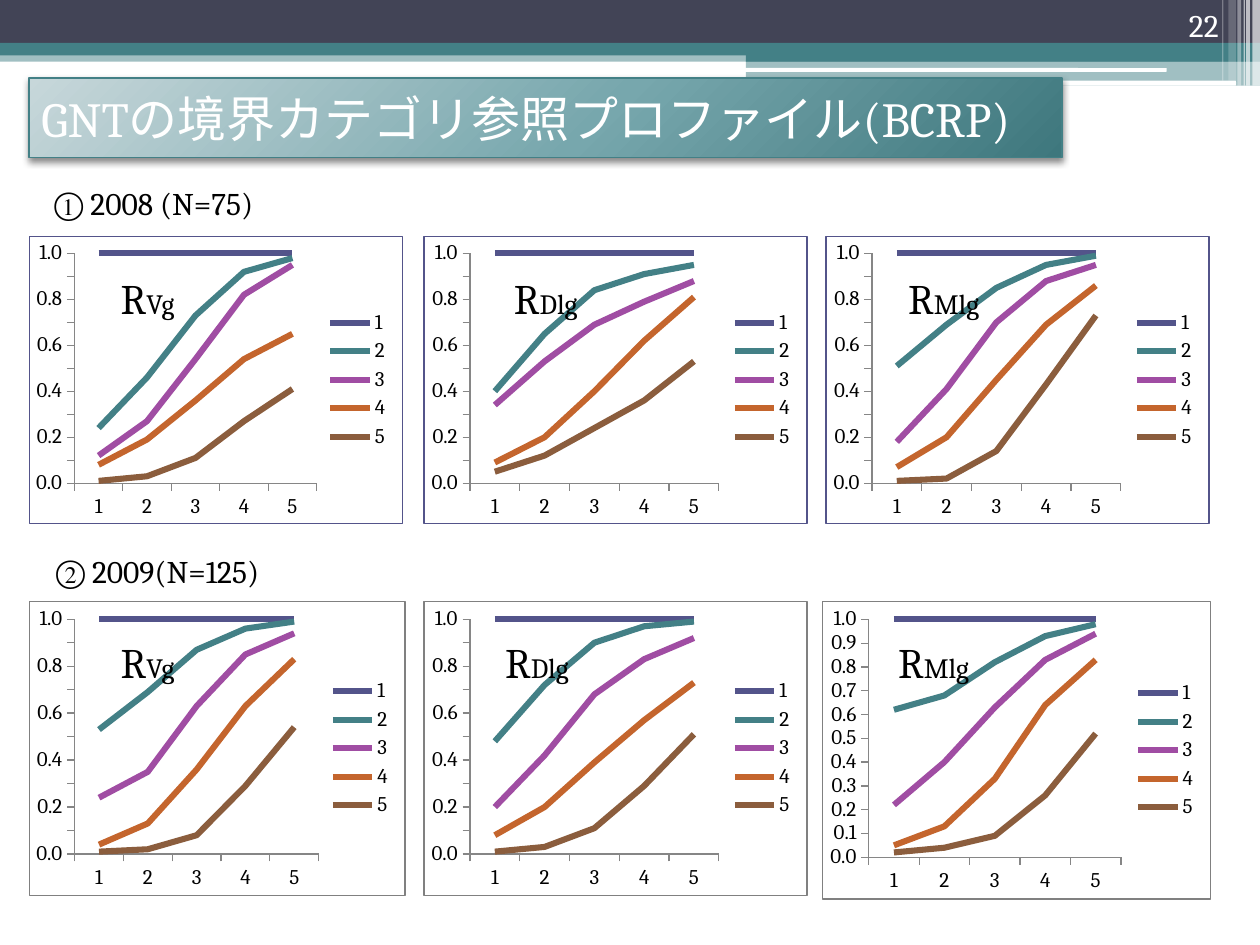
import lxml.etree
import pptx
import pptx.chart.data
import pptx.dml.color
import pptx.enum.chart
import pptx.enum.shapes
import pptx.enum.text
import pptx.oxml.ns
import pptx.util

Inches = pptx.util.Inches
Pt = pptx.util.Pt
qn = pptx.oxml.ns.qn
SHAPE = pptx.enum.shapes.MSO_SHAPE
ALIGN = pptx.enum.text.PP_ALIGN
ANCHOR = pptx.enum.text.MSO_ANCHOR
TICK = pptx.enum.chart.XL_TICK_MARK

FONT = "Cambria"
COLORS = {
    "navy": "424456", "teal": "438086", "white": "FFFFFF", "black": "000000",
    "indigo": "53548A", "purple": "A04DA3", "orange": "C4652D",
    "brown": "8B5D3D", "gray": "808080", "axis": "868686",
    "pale": "C7D7DA", "mid": "77A7AD", "deep": "3E777D",
}
SERIES_COLORS = ["indigo", "teal", "purple", "orange", "brown"]
NAMESPACES = (
    'xmlns:a="http://schemas.openxmlformats.org/drawingml/2006/main" '
    'xmlns:c="http://schemas.openxmlformats.org/drawingml/2006/chart"'
)


def rgb(name):
    """Return the named colour."""
    return pptx.dml.color.RGBColor.from_string(COLORS[name])


def xml(tag, body):
    """Return an element of the given tag with the given inner markup."""
    return lxml.etree.fromstring(f"<{tag} {NAMESPACES}>{body}</{tag}>")


def add_bar(slide, box, color, alpha=100, kind=SHAPE.RECTANGLE):
    """Draw one borderless bar with an opacity in percent."""
    bar = slide.shapes.add_shape(kind, *map(Inches, box))
    bar.shadow.inherit = False
    bar.line.fill.background()
    bar.fill.solid()
    bar.fill.fore_color.rgb = rgb(color)
    if alpha < 100:
        tint = bar.fill._xPr.find(".//" + qn("a:srgbClr"))
        lxml.etree.SubElement(tint, qn("a:alpha")).set("val", str(alpha * 1000))
    return bar


def add_runs(paragraph, runs, color="black"):
    """Add (text, size) runs to a paragraph."""
    for text, size in runs:
        run = paragraph.add_run()
        run.text = text
        run.font.name = FONT
        run.font.size = Pt(size)
        run.font.color.rgb = rgb(color)


def add_label(slide, box, runs, align=ALIGN.LEFT, color="black", anchor=ANCHOR.TOP, wrap=True):
    """Place a one-line text box."""
    frame = slide.shapes.add_textbox(*map(Inches, box)).text_frame
    frame.word_wrap = wrap
    frame.vertical_anchor = anchor
    frame.paragraphs[0].alignment = align
    add_runs(frame.paragraphs[0], runs, color)


def add_header(slide, left, top, width):
    """Draw the banded header with its stripes and page number."""
    half = left + 5.92
    right = left + width
    add_bar(slide, (left, top + 0.4, width, 0.09), "teal", 50)
    add_bar(slide, (left, top, width, 0.34), "navy")
    add_bar(slide, (left, top + 0.34, width, 0.1), "teal")
    add_bar(slide, (half, top + 0.39, right - half, 0.1), "teal")
    add_bar(slide, (half, top + 0.48, right - half, 0.2), "teal", 50)
    add_bar(slide, (half - 0.01, top + 0.54, 3.35, 0.03), "white", kind=SHAPE.ROUNDED_RECTANGLE)
    add_bar(slide, (left + 8.06, top + 0.64, 1.75, 0.04), "white", kind=SHAPE.ROUNDED_RECTANGLE)
    stripes = [
        (0.06, 0.06, 0.68, 65), (0.11, 0.03, 0.68, 65), (0.13, 0.01, 0.68, 60),
        (0.18, 0.03, 0.68, 40), (0.25, 0.06, 0.64, 20), (0.3, 0.01, 0.64, 30),
    ]
    for inset, stripe_width, height, alpha in stripes:
        add_bar(slide, (right - inset, top, stripe_width, height), "white", alpha)
    add_label(slide, (right - 1.06, top, 0.83, 0.4), [("22", 18)],
              ALIGN.RIGHT, "white", ANCHOR.BOTTOM)


def add_title(slide, box):
    """Draw the gradient title banner."""
    banner = add_bar(slide, box, "teal")
    banner.line.color.rgb = rgb("teal")
    banner.line.width = Pt(0.75)
    stops = "".join(
        f'<a:gs pos="{position * 1000}"><a:srgbClr val="{COLORS[name]}"/></a:gs>'
        for position, name in [(0, "pale"), (55, "mid"), (100, "deep")]
    )
    gradient = xml("a:gradFill", f'<a:gsLst>{stops}</a:gsLst><a:path path="circle">'
                   '<a:fillToRect l="-40000" t="-90000" r="140000" b="190000"/></a:path>')
    properties = banner.element.spPr
    properties.replace(properties.find(qn("a:solidFill")), gradient)
    properties.find(qn("a:effectLst")).append(lxml.etree.fromstring(
        f'<a:outerShdw {NAMESPACES} blurRad="{Pt(4)}" dist="{Pt(2)}" dir="5400000" '
        'rotWithShape="0"><a:srgbClr val="000000"><a:alpha val="45000"/>'
        '</a:srgbClr></a:outerShdw>'))
    frame = banner.text_frame
    frame.word_wrap = True
    frame.vertical_anchor = ANCHOR.MIDDLE
    frame.paragraphs[0].alignment = ALIGN.LEFT
    add_runs(frame.paragraphs[0], [("GNTの境界カテゴリ参照プロファイル(BCRP)", 28)], "white")


def add_profile_chart(slide, box, border, profiles):
    """Draw one line chart of category profiles."""
    data = pptx.chart.data.CategoryChartData(number_format="0.00")
    data.categories = ["1", "2", "3", "4", "5"]
    for number, values in enumerate([[1] * 5] + profiles, 1):
        data.add_series(str(number), values)
    chart = slide.shapes.add_chart(
        pptx.enum.chart.XL_CHART_TYPE.LINE, *map(Inches, box), data).chart
    chart.has_title = False
    chart.font.name = FONT
    chart.font.size = Pt(12)
    chart.font.color.rgb = rgb("black")
    chart.has_legend = True
    chart.legend.position = pptx.enum.chart.XL_LEGEND_POSITION.RIGHT
    chart.legend.include_in_layout = False
    chart.plots[0].vary_by_categories = False
    for series, color in zip(chart.plots[0].series, SERIES_COLORS):
        series.smooth = False
        series.marker.style = pptx.enum.chart.XL_MARKER_STYLE.NONE
        series.format.line.color.rgb = rgb(color)
        series.format.line.width = Pt(3.5)
    for axis in (chart.category_axis, chart.value_axis):
        axis.has_major_gridlines = False
        axis.major_tick_mark = TICK.OUTSIDE
        axis.minor_tick_mark = TICK.NONE
        axis.format.line.color.rgb = rgb("axis")
        axis.format.line.width = Pt(0.75)
    scale = chart.value_axis
    scale.minimum_scale, scale.maximum_scale, scale.major_unit = 0, 1, 0.1
    scale.tick_labels.number_format = "0.0"
    scale.tick_labels.number_format_is_linked = False
    chart_root = chart.element.find(qn("c:chart"))
    plot_area = chart_root.find(qn("c:plotArea"))
    for layout in plot_area.findall(qn("c:layout")):
        plot_area.remove(layout)
    settings = [("layoutTarget", "inner"), ("xMode", "edge"), ("yMode", "edge"),
                ("x", 0.12), ("y", 0.06), ("w", 0.65), ("h", 0.8)]
    inner = "".join(f'<c:{key} val="{value}"/>' for key, value in settings)
    plot_area.insert(0, xml("c:layout", f"<c:manualLayout>{inner}</c:manualLayout>"))
    chart_root.addnext(xml(
        "c:spPr", f'<a:solidFill><a:srgbClr val="{COLORS["white"]}"/></a:solidFill>'
        f'<a:ln w="{Pt(0.75)}"><a:solidFill><a:srgbClr val="{COLORS[border]}"/>'
        '</a:solidFill></a:ln>'))


def add_year(slide, top, heading, heading_width, border, panels):
    """Place a year's heading and its row of labelled charts."""
    add_label(slide, (0.23, top, heading_width, 0.4), [(heading, 18)], ALIGN.CENTER, wrap=False)
    for left, width, height, name, offset, label_top, label_width, profiles in panels:
        chart_top = top + (0.46 if border == "indigo" else 0.44)
        add_profile_chart(slide, (left, chart_top, width, height), border, profiles)
        add_label(slide, (left + offset, chart_top + label_top, label_width, 0.5),
                  [("R", 24), (name, 16)])


def main():
    """Build the slide and save it."""
    deck = pptx.Presentation()
    deck.slide_width, deck.slide_height = Inches(10), Inches(7.5)
    slide = deck.slides.add_slide(deck.slide_layouts[6])
    add_header(slide, 0, 0, 10)
    add_year(slide, 1.41, "① 2008 (N=75)", 1.98, "indigo", [
        (0.23, 2.97, 2.29, "Vg", 0.63, 0.24, 0.7, [
            [0.24, 0.46, 0.73, 0.92, 0.98], [0.12, 0.27, 0.54, 0.82, 0.95],
            [0.08, 0.19, 0.36, 0.54, 0.65], [0.01, 0.03, 0.11, 0.27, 0.41]]),
        (3.36, 3.05, 2.29, "Dlg", 0.62, 0.24, 0.78, [
            [0.4, 0.65, 0.84, 0.91, 0.95], [0.34, 0.53, 0.69, 0.79, 0.88],
            [0.09, 0.2, 0.4, 0.62, 0.81], [0.05, 0.12, 0.24, 0.36, 0.53]]),
        (6.55, 3.05, 2.29, "Mlg", 0.56, 0.24, 0.86, [
            [0.51, 0.69, 0.85, 0.95, 0.99], [0.18, 0.41, 0.7, 0.88, 0.95],
            [0.07, 0.2, 0.45, 0.69, 0.86], [0.01, 0.02, 0.14, 0.43, 0.73]])])
    add_year(slide, 4.33, "② 2009(N=125)", 2.04, "gray", [
        (0.23, 2.99, 2.34, "Vg", 0.63, 0.23, 0.7, [
            [0.53, 0.69, 0.87, 0.96, 0.99], [0.24, 0.35, 0.63, 0.85, 0.94],
            [0.04, 0.13, 0.36, 0.63, 0.83], [0.01, 0.02, 0.08, 0.29, 0.54]]),
        (3.36, 3.05, 2.34, "Dlg", 0.55, 0.23, 0.78, [
            [0.48, 0.72, 0.9, 0.97, 0.99], [0.2, 0.42, 0.68, 0.83, 0.92],
            [0.08, 0.2, 0.39, 0.57, 0.73], [0.01, 0.03, 0.11, 0.29, 0.51]]),
        (6.52, 3.09, 2.37, "Mlg", 0.51, 0.23, 0.86, [
            [0.62, 0.68, 0.82, 0.93, 0.98], [0.22, 0.4, 0.63, 0.83, 0.94],
            [0.05, 0.13, 0.33, 0.64, 0.83], [0.02, 0.04, 0.09, 0.26, 0.52]])])
    add_title(slide, (0.23, 0.62, 8.2, 0.63))
    deck.save("out.pptx")


if __name__ == "__main__":
    main()
